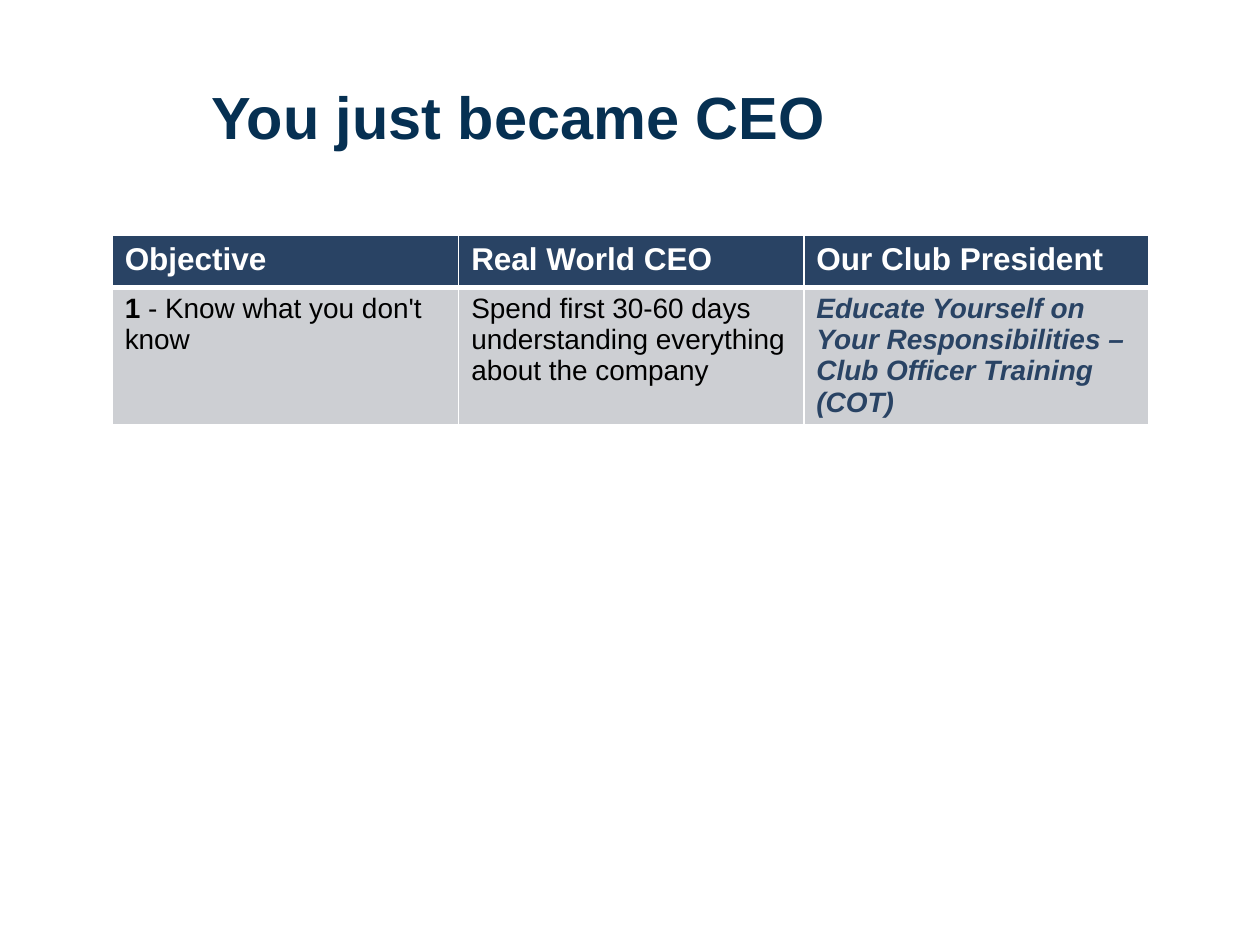
from pptx import Presentation
from pptx import util as u
from pptx.dml.color import RGBColor
from pptx.enum import text
from pptx.oxml import parse_xml
from pptx.oxml.ns import nsdecls

NAVY = RGBColor(0x06, 0x30, 0x52)
BLUE = RGBColor(0x29, 0x43, 0x64)
GRAY = RGBColor(0xCD, 0xCF, 0xD3)
WHITE = RGBColor(0xFF, 0xFF, 0xFF)
BLACK = RGBColor(0, 0, 0)


def style(run, color, **form):
    run.font.name = "Arial"
    run.font.color.rgb = color
    for key, val in form.items():
        setattr(run.font, key, val)


def edge(cell, side, width):
    line = parse_xml(
        f'<a:{side} {nsdecls("a")} w="{u.Pt(width)}"><a:solidFill>'
        f'<a:srgbClr val="{WHITE}"/></a:solidFill></a:{side}>')
    cell._tc.get_or_add_tcPr().append(line)


deck = Presentation()
deck.slide_width, deck.slide_height = u.Inches(10), u.Inches(7.5)
slide = deck.slides.add_slide(deck.slide_layouts[5])

# Title
title = slide.shapes.title
title.left, title.top = u.Inches(1.58), u.Inches(0.58)
title.width, title.height = u.Inches(8.17), u.Inches(0.67)
title.text_frame.vertical_anchor = text.MSO_ANCHOR.MIDDLE
para = title.text_frame.paragraphs[0]
para.alignment = text.PP_ALIGN.LEFT
run = para.add_run()
run.text = "You just became CEO"
style(run, NAVY, size=u.Pt(34), bold=True)

# Table content: each cell is a list of runs with their format
head = dict(color=WHITE, size=u.Pt(18), bold=True)
body = dict(color=BLACK, size=u.Pt(16), bold=False)
mark = dict(body, bold=True)
goal = dict(mark, color=BLUE, italic=True)
rows = [
    [[("Objective", head)],
     [("Real World CEO", head)],
     [("Our Club President", head)]],
    [[("1", mark), (" - Know what you don't know", body)],
     [("Spend first 30-60 days understanding everything "
       "about the company", body)],
     [("Educate Yourself on Your Responsibilities – "
       "Club Officer Training (COT)", goal)]],
]

# Table
table = slide.shapes.add_table(
    2, 3, u.Inches(0.89), u.Inches(1.87),
    u.Inches(8.23), u.Inches(0.82)).table
for col, width in zip(table.columns, (2.75, 2.74, 2.74)):
    col.width = u.Inches(width)
for r, row in enumerate(rows):
    table.rows[r].height = u.Inches(0.41)
    for c, runs in enumerate(row):
        cell = table.cell(r, c)
        for side, width in dict(lnL=1, lnR=1, lnT=3 if r else 1,
                                lnB=1 if r else 3).items():
            edge(cell, side, width)
        cell.fill.solid()
        cell.fill.fore_color.rgb = GRAY if r else BLUE
        for words, form in runs:
            run = cell.text_frame.paragraphs[0].add_run()
            run.text = words
            style(run, **form)

deck.save("out.pptx")
